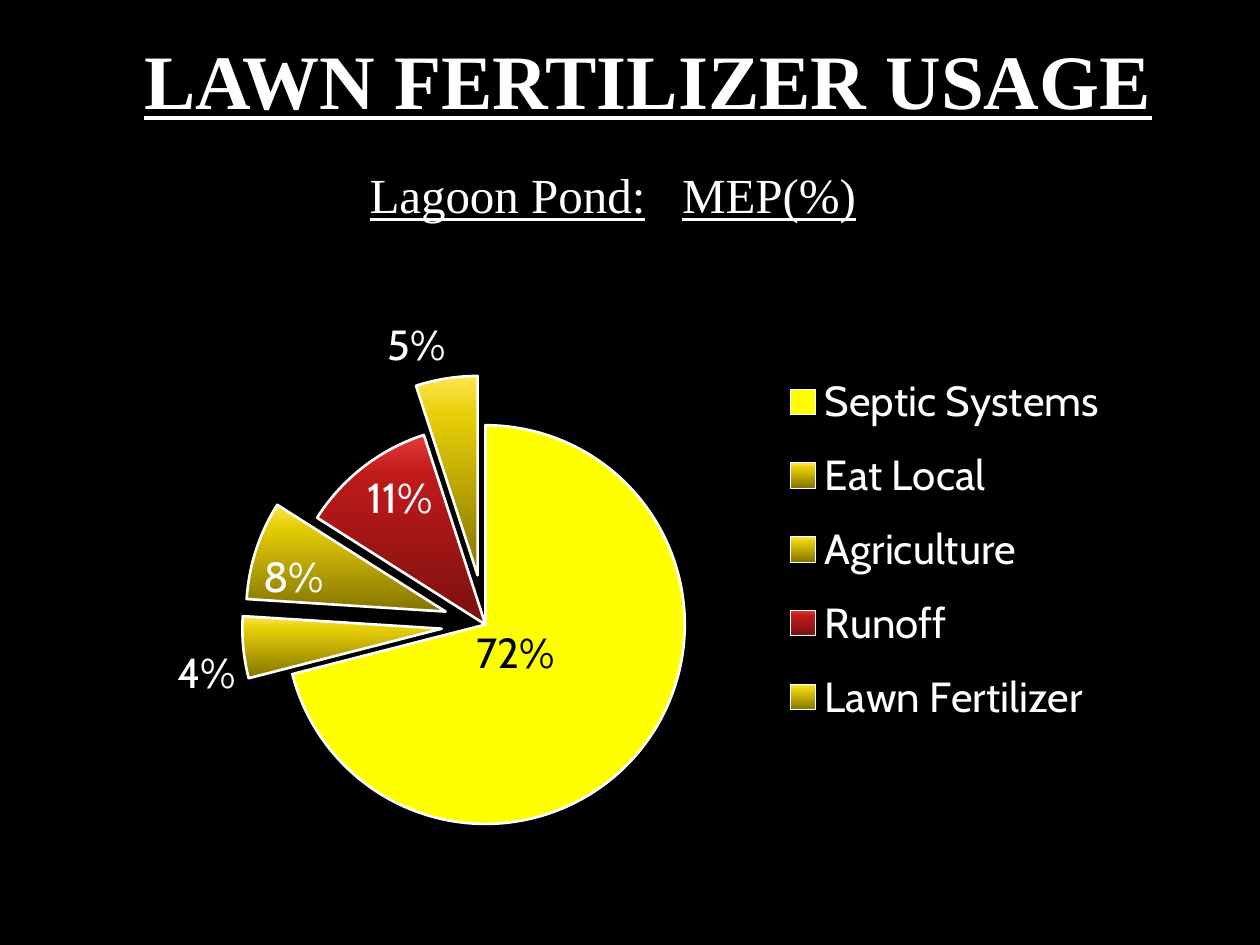
from copy import deepcopy
from dataclasses import dataclass

from lxml import etree
from pptx import Presentation
from pptx.chart.data import CategoryChartData
from pptx.dml.color import RGBColor
from pptx.enum.chart import XL_CHART_TYPE, XL_LABEL_POSITION, XL_LEGEND_POSITION
from pptx.enum.text import MSO_ANCHOR, PP_ALIGN
from pptx.oxml import parse_xml
from pptx.oxml.ns import nsdecls, qn
from pptx.util import Cm, Pt

PIE = XL_CHART_TYPE.PIE_EXPLODED
RIGHT = XL_LEGEND_POSITION.RIGHT
CENTER = XL_LABEL_POSITION.CENTER
INSIDE = XL_LABEL_POSITION.INSIDE_END
OUTSIDE = XL_LABEL_POSITION.OUTSIDE_END


@dataclass(frozen=True)
class Theme:
    background: str = "000000"
    light: str = "FFFFFF"
    dark: str = "000000"
    septic: tuple = ("FFFF00",)
    gold: tuple = ("FFE64D", "E6CE08", "857400")
    red: tuple = ("E53A3A", "C01A1A", "7A1010")
    text_font: str = "Times New Roman"
    chart_font: str = "Cabin"
    title_size: int = 44
    subtitle_size: int = 28
    chart_size: int = 24


@dataclass(frozen=True)
class Slice:
    name: str
    value: float
    colors: tuple
    explosion: int = 0
    position: object = INSIDE
    label: str = ""  # shown in place of the value
    label_color: str = Theme.light


class SlideBuilder:
    def __init__(self, deck, theme):
        self.theme = theme
        self.slide = deck.slides.add_slide(deck.slide_layouts[6])
        fill = self.slide.background.fill
        fill.solid()
        fill.fore_color.rgb = RGBColor.from_string(theme.background)

    def style(self, font, name, size, color):
        font.name = name
        font.size = Pt(size)
        font.color.rgb = RGBColor.from_string(color)

    def text(self, left, top, width, height, words, size, bold=False,
             align=PP_ALIGN.LEFT, anchor=MSO_ANCHOR.TOP, indent=0, tab=None):
        box = self.slide.shapes.add_textbox(Cm(left), Cm(top), Cm(width), Cm(height))
        frame = box.text_frame
        frame.word_wrap = True
        frame.vertical_anchor = anchor
        para = frame.paragraphs[0]
        para.alignment = align
        properties = para._p.get_or_add_pPr()
        properties.set("marL", str(Cm(indent)))
        if tab:
            stops = etree.SubElement(properties, qn("a:tabLst"))
            etree.SubElement(stops, qn("a:tab"), pos=str(Cm(tab)), algn="l")
        span = para.add_run()
        span.text = words
        self.style(span.font, self.theme.text_font, size, self.theme.light)
        span.font.bold = bold
        span.font.underline = True

    def layout(self, x, y, width=None, height=None, inner=False):
        parts = ['<c:layoutTarget val="inner"/>'] if inner else []
        if width:
            parts.append('<c:xMode val="edge"/><c:yMode val="edge"/>')
        sizes = {"x": x, "y": y, "w": width, "h": height}
        parts += [f'<c:{key} val="{size}"/>' for key, size in sizes.items() if size]
        return parse_xml(f'<c:layout {nsdecls("c")}><c:manualLayout>{"".join(parts)}'
                         "</c:manualLayout></c:layout>")

    def replace_layout(self, parent, layout, index):
        for old in parent.findall(qn("c:layout")):
            parent.remove(old)
        parent.insert(index, layout)

    def pie(self, left, top, width, height, slices):
        theme = self.theme
        data = CategoryChartData(number_format="0%")
        data.categories = [part.name for part in slices]
        data.add_series("Series 1", [part.value for part in slices])
        chart = self.slide.shapes.add_chart(
            PIE, Cm(left), Cm(top), Cm(width), Cm(height), data).chart
        chart.has_title = False
        self.style(chart.font, theme.chart_font, theme.chart_size, theme.light)
        plot = chart.plots[0]
        plot.vary_by_categories = True
        self.replace_layout(chart._chartSpace.chart.plotArea,
                            self.layout(0.13, 0.24, 0.41, 0.61, inner=True), 0)

        # Legend
        chart.has_legend = True
        legend = chart.legend
        legend.position = RIGHT
        legend.include_in_layout = False
        self.style(legend.font, theme.chart_font, theme.chart_size, theme.light)
        self.replace_layout(legend._element, self.layout(0.636, 0.13, 0.34, 0.6), 1)

        # Value labels shared by all slices
        series = plot.series[0]
        for old in series._element.findall(qn("c:explosion")):
            series._element.remove(old)
        labels = series.data_labels
        labels.show_value = True
        labels.number_format = "0%"
        labels.number_format_is_linked = False
        labels.position = INSIDE
        self.style(labels.font, theme.chart_font, theme.chart_size, theme.light)

        for index, part in enumerate(slices):
            self.pie_slice(series, index, part)

    def pie_slice(self, series, index, part):
        point = series.points[index]
        self.fill(series, index, point.format.fill, part.colors)
        line = point.format.line
        line.width = Pt(1.5)
        line.color.rgb = RGBColor.from_string(self.theme.light)
        element = series._element.xpath(f'c:dPt[c:idx/@val="{index}"]')[0]
        for old in element.findall(qn("c:explosion")):
            element.remove(old)
        explosion = etree.Element(qn("c:explosion"), val=str(part.explosion))
        element.find(qn("c:spPr")).addprevious(explosion)

        # Label of this slice
        label = point.data_label
        if part.label:
            label.text_frame.word_wrap = False
            span = label.text_frame.paragraphs[0].add_run()
            span.text = part.label
            font = span.font
        else:
            font = label.font
        self.style(font, self.theme.chart_font, self.theme.chart_size, part.label_color)
        label.position = part.position
        if part.position == CENTER:
            holder = series._element.xpath(f'c:dLbls/c:dLbl[c:idx/@val="{index}"]')[0]
            self.replace_layout(holder, self.layout(-0.05, -0.05), 1)

    def fill(self, series, index, fill, colors):
        if len(colors) == 1:
            fill.solid()
            fill.fore_color.rgb = RGBColor.from_string(colors[0])
            return
        fill.gradient()
        fill.gradient_angle = 270
        stops = series._element.xpath(f'c:dPt[c:idx/@val="{index}"]//a:gsLst')[0]
        stops.insert(1, deepcopy(stops[0]))
        for stop, color, position in zip(fill.gradient_stops, colors, (0, 0.2, 1)):
            stop.color.rgb = RGBColor.from_string(color)
            stop.position = position


def main():
    theme = Theme()
    deck = Presentation()
    deck.slide_width, deck.slide_height = Cm(25.4), Cm(19.05)
    page = SlideBuilder(deck, theme)

    # Headings
    page.text(0.1, 0.1, 25.3, 2.54, "LAWN FERTILIZER USAGE", theme.title_size, bold=True,
              align=PP_ALIGN.CENTER, anchor=MSO_ANCHOR.BOTTOM, indent=0.64)
    page.text(7.2, 3.2, 12.14, 1.45, "Lagoon Pond:\tMEP(%)", theme.subtitle_size, tab=6.3)

    # Nitrogen sources
    page.pie(3.2, 5.41, 19.66, 13.18, [
        Slice("Septic Systems", 0.71, theme.septic, 0, CENTER, "72%", theme.dark),
        Slice("Eat Local", 0.05, theme.gold, 22, OUTSIDE, "4%"),
        Slice("Agriculture", 0.08, theme.gold, 21),
        Slice("Runoff", 0.11, theme.red),
        Slice("Lawn Fertilizer", 0.05, theme.gold, 25, OUTSIDE),
    ])

    deck.save("out.pptx")


if __name__ == "__main__":
    main()
